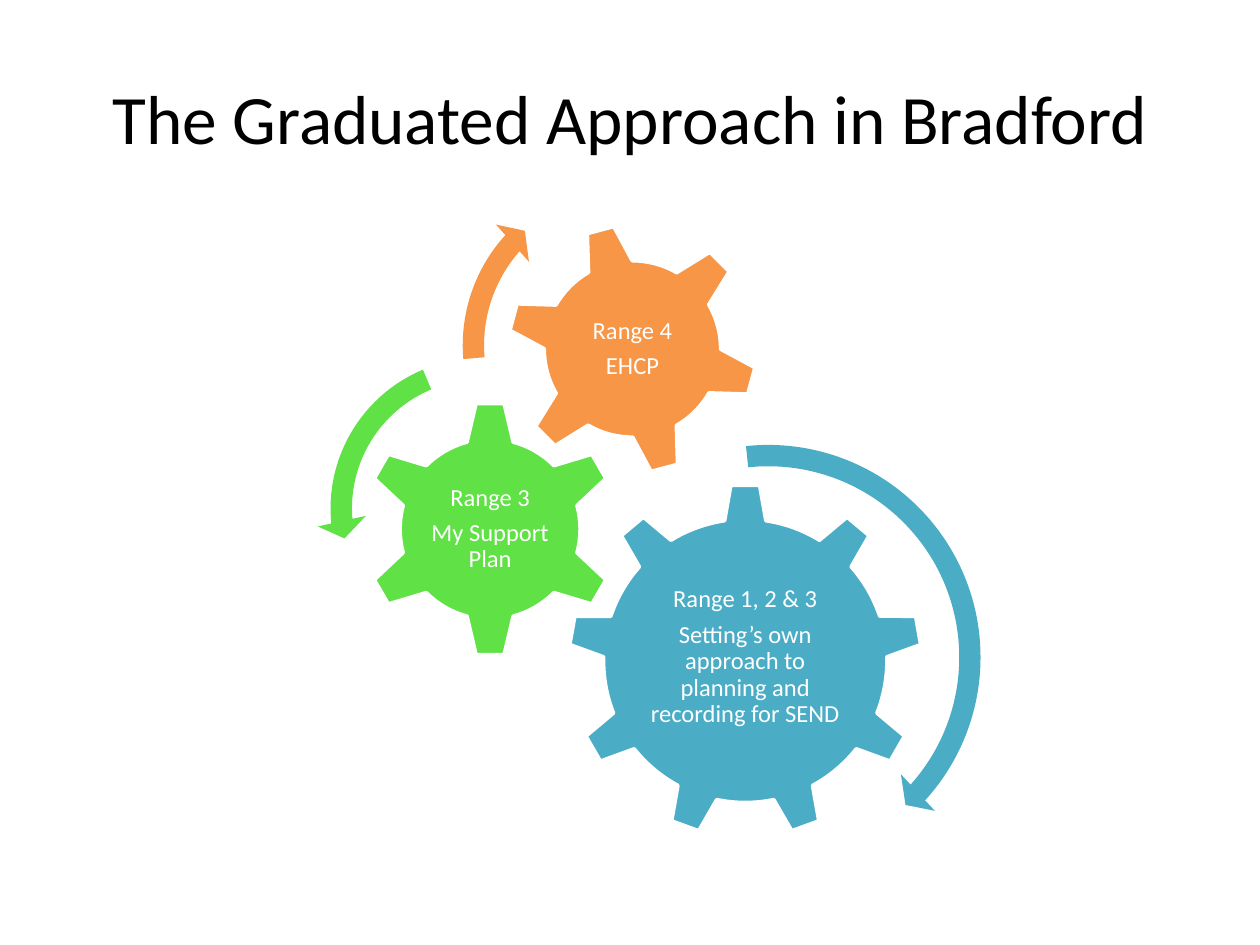
from collections import namedtuple
from pptx import Presentation
from pptx.dml.color import RGBColor
from pptx.enum.shapes import MSO_SHAPE as Shape
from pptx.enum.text import MSO_ANCHOR as Anchor, PP_ALIGN as Align
from pptx.util import Inches, Pt

WHITE = RGBColor(0xFF, 0xFF, 0xFF)
BLACK = RGBColor(0, 0, 0)
BLUE = RGBColor(0x4B, 0xAC, 0xC6)
GREEN = RGBColor(0x60, 0xE1, 0x46)
ORANGE = RGBColor(0xF7, 0x96, 0x46)

WIDE, HIGH = Inches(10), Inches(7.5)
Box = namedtuple("Box", "x y w h")
Gear = namedtuple("Gear", "kind color box turn lines label arrow sweep bend")

# Gear boxes are per cent of the slide (left, top, size by width);
# labels and arrows are shares of their gear's box.
GEARS = [
    Gear(Shape.GEAR_9, BLUE, (45.1, 51.2, 28.1), 0,
         ["Range 1, 2 & 3",
          "Setting’s own approach to planning and recording for SEND"],
         (0.2, 0.235, 0.6, 0.51),
         Shape.CIRCULAR_ARROW, (-0.075, -0.15, 1.28, 1.28),
         (0.047, 2.99, 25.265, 158.393, 0.055)),
    Gear(Shape.GEAR_6, GREEN, (28.7, 42.4, 20.4), 0,
         ["Range 3", "My Support Plan"],
         (0.25, 0.25, 0.5, 0.5),
         Shape.LEFT_CIRCULAR_ARROW, (-0.175, -0.22, 1.28, 1.28),
         (0.065, 4.3, 104.891, 148.378, 0.075)),
    Gear(Shape.GEAR_6, ORANGE, (40.2, 23.6, 20), -15,
         ["Range 4", "EHCP"],
         (0.22, 0.22, 0.56, 0.56),
         Shape.CIRCULAR_ARROW, (-0.23, -0.22, 1.41, 1.41),
         (0.06, 3.941, 133.138, 105.082, 0.07)),
]


def place(x, y, size):
    """Square box from per cent of the slide."""
    side = int(WIDE * size / 100)
    return Box(int(WIDE * x / 100), int(HIGH * y / 100), side, side)


def part(box, x, y, w, h):
    """Box inside another, given as shares of it."""
    return Box(int(box.x + x * box.w), int(box.y + y * box.h),
               int(w * box.w), int(h * box.h))


def write(frame, lines, size, color, lead=None, after=None, pad=None):
    frame.word_wrap = True
    frame.vertical_anchor = Anchor.MIDDLE
    if pad is not None:
        frame.margin_left = frame.margin_right = pad
        frame.margin_top = frame.margin_bottom = pad
    for i, line in enumerate(lines):
        para = frame.add_paragraph() if i else frame.paragraphs[0]
        para.alignment = Align.CENTER
        para.line_spacing, para.space_after = lead, after
        run = para.add_run()
        run.text = line
        run.font.name, run.font.size = "Calibri", Pt(size)
        run.font.color.rgb = color


def draw(shapes, kind, box, color, edge=None):
    shape = shapes.add_shape(kind, *box)
    shape.shadow.inherit = False
    shape.fill.solid()
    shape.fill.fore_color.rgb = color
    if edge is None:
        shape.line.fill.background()
    else:
        shape.line.color.rgb = edge
        shape.line.width = Pt(2)
    return shape


def add_gear(shapes, gear):
    box = place(*gear.box)
    draw(shapes, gear.kind, box, gear.color, WHITE).rotation = gear.turn
    label = shapes.add_textbox(*part(box, *gear.label))
    write(label.text_frame, gear.lines, 14, WHITE,
          lead=0.9, after=Pt(4.9), pad=Inches(0.02))


def add_arrow(shapes, gear):
    box = part(place(*gear.box), *gear.sweep)
    arrow = draw(shapes, gear.arrow, box, gear.color)
    for i, value in enumerate(gear.bend):
        arrow.adjustments[i] = value


def add_train(slide, gears):
    shapes = slide.shapes.add_group_shape().shapes
    for add in (add_gear, add_arrow):
        for gear in gears:
            add(shapes, gear)


def add_title(slide, text):
    title = slide.shapes.title
    title.left, title.top = int(WIDE * 0.05), int(HIGH * 0.04)
    title.width, title.height = int(WIDE * 0.9), int(HIGH / 6)
    write(title.text_frame, [text], 39.6, BLACK)


def main():
    deck = Presentation()
    deck.slide_width, deck.slide_height = WIDE, HIGH
    slide = deck.slides.add_slide(deck.slide_layouts[5])
    add_title(slide, "The Graduated Approach in Bradford")
    add_train(slide, GEARS)
    deck.save("out.pptx")


if __name__ == "__main__":
    main()
